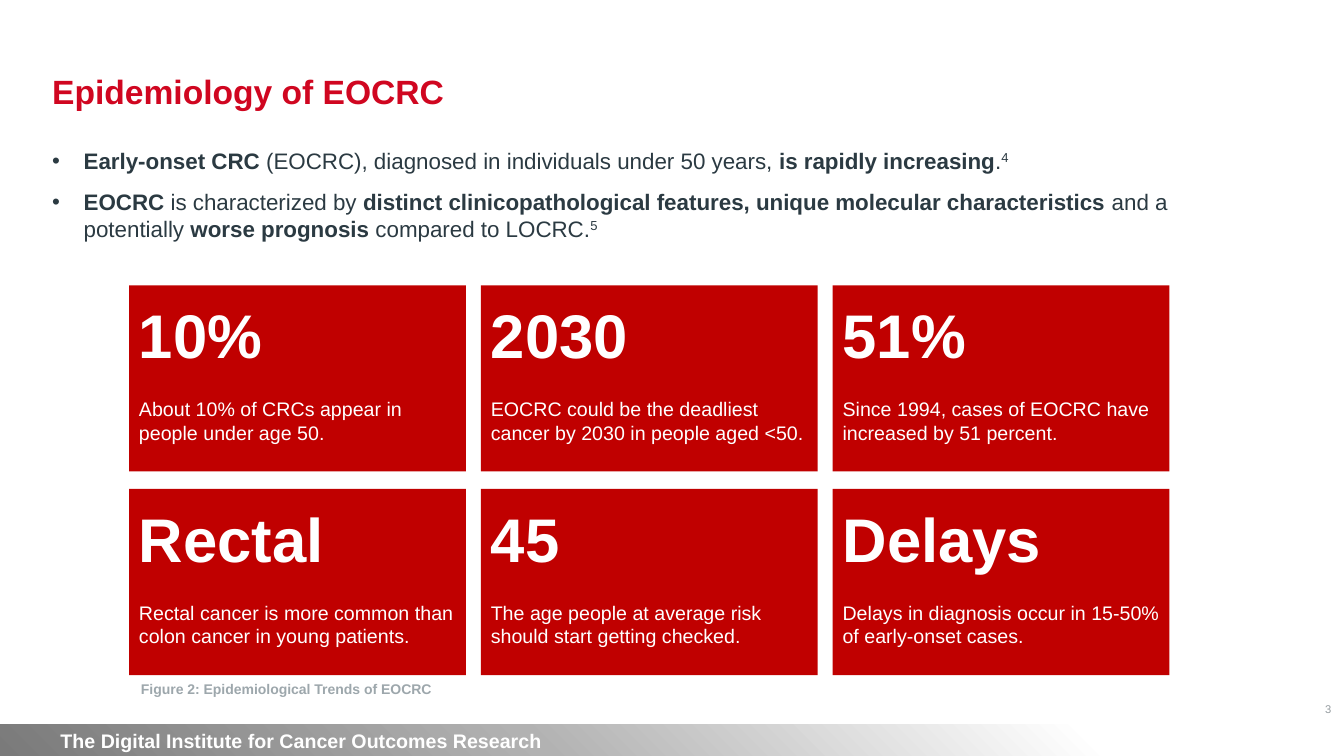
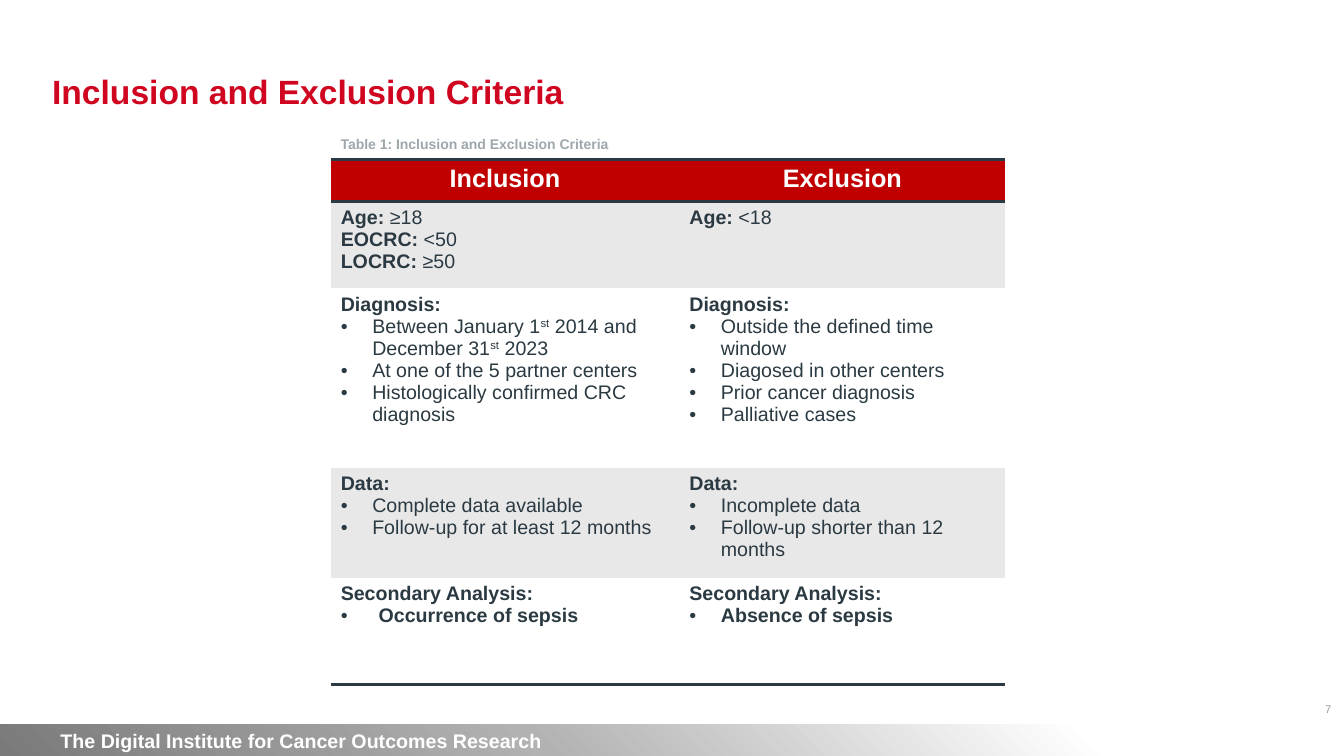
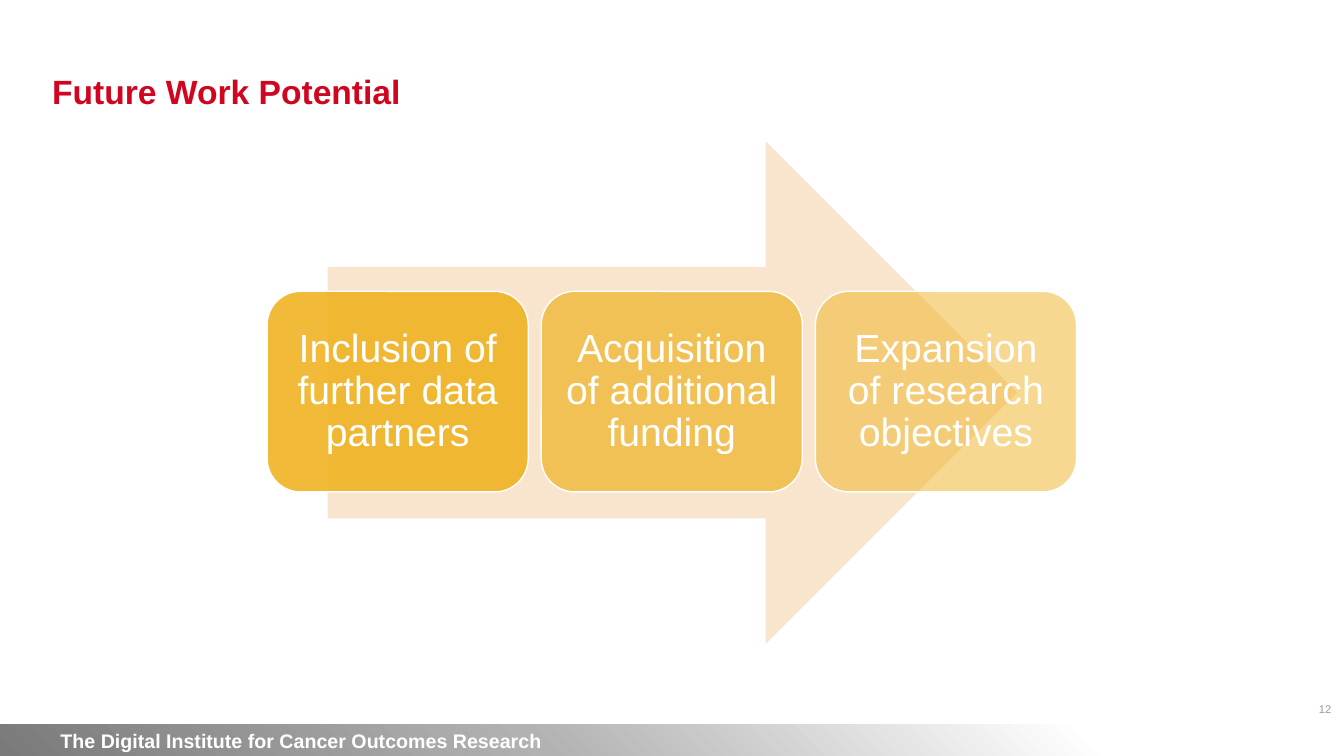
from pptx import Presentation
from pptx.dml.color import RGBColor
from pptx.enum.shapes import MSO_SHAPE
from pptx.enum.text import MSO_ANCHOR, PP_ALIGN
from pptx.oxml import parse_xml
from pptx.oxml.ns import nsdecls, qn
from pptx.util import Pt

RECTANGLE, ROUNDED, ARROW = (
    MSO_SHAPE.RECTANGLE, MSO_SHAPE.ROUNDED_RECTANGLE, MSO_SHAPE.RIGHT_ARROW)
TOP, MIDDLE, BOTTOM = MSO_ANCHOR.TOP, MSO_ANCHOR.MIDDLE, MSO_ANCHOR.BOTTOM
LEFT, CENTER, RIGHT = PP_ALIGN.LEFT, PP_ALIGN.CENTER, PP_ALIGN.RIGHT

FONT = "Arial"
WHITE = RGBColor(0xFF, 0xFF, 0xFF)
INK = RGBColor(0x2B, 0x3A, 0x42)
TITLE_RED = RGBColor(0xD0, 0x06, 0x20)
CARD_RED = RGBColor(0xC0, 0x00, 0x00)
CAPTION_GRAY = RGBColor(0x9D, 0xA7, 0xAC)
NUMBER_GRAY = RGBColor(0x95, 0x9C, 0xA0)
ROW_GRAY = RGBColor(0xE8, 0xE8, 0xE9)
ARROW_CREAM = RGBColor(0xF9, 0xE5, 0xCD)
STEP_YELLOW = RGBColor(0xF0, 0xB3, 0x23)

SLIDE_W, SLIDE_H = 960, 540
INSETS = (7.2, 3.6, 7.2, 3.6)
BULLET_INDENT = 22.5
BAND_H = 22.5
BAND_STOPS = [(0, "7A7A7A"), (40, "B2B2B2"), (81, "FFFFFF")]
INSTITUTE = "The Digital Institute for Cancer Outcomes Research"

# A run is (text, style); a paragraph is (indent, runs).
PLAIN, BOLD, SUPER = "plain", "bold", "super"


def line(text, style=PLAIN):
    return (0, [(text, style)])


def bullet(*runs, indent=BULLET_INDENT):
    return (indent, runs)


def criteria(heading, *items):
    return [line(heading, BOLD)] + [bullet((item, PLAIN)) for item in items]


TRENDS = [
    bullet(("Early-onset CRC", BOLD),
           (" (EOCRC), diagnosed in individuals under 50 years, ", PLAIN),
           ("is rapidly increasing", BOLD), (".", PLAIN), ("4", SUPER)),
    bullet(("EOCRC ", BOLD), ("is characterized by ", PLAIN),
           ("distinct clinicopathological features, unique molecular characteristics", BOLD),
           (" and a potentially ", PLAIN), ("worse prognosis", BOLD),
           (" compared to LOCRC.", PLAIN), ("5", SUPER)),
]
FACTS = [
    ("10%", "About 10% of CRCs appear in people under age 50."),
    ("2030", "EOCRC could be the deadliest cancer by 2030 in people aged <50."),
    ("51%", "Since 1994, cases of EOCRC have increased by 51 percent."),
    ("Rectal", "Rectal cancer is more common than colon cancer in young patients."),
    ("45", "The age people at average risk should start getting checked."),
    ("Delays", "Delays in diagnosis occur in 15-50% of early-onset cases."),
]
CRITERIA_COLUMNS = [("Inclusion", 249), ("Exclusion", 233)]
HEADER_H = 30.2
CRITERIA_ROWS = [
    (62, [
        [(0, [("Age: ", BOLD), ("≥18", PLAIN)]),
         (0, [("EOCRC:", BOLD), (" <50", PLAIN)]),
         (0, [("LOCRC: ", BOLD), ("≥50", PLAIN)])],
        [(0, [("Age:", BOLD), (" <18", PLAIN)])],
    ]),
    (128.2, [
        [line("Diagnosis:", BOLD),
         bullet(("Between January 1", PLAIN), ("st", SUPER),
                (" 2014 and December 31", PLAIN), ("st", SUPER), (" 2023", PLAIN)),
         bullet(("At one of the 5 partner centers", PLAIN)),
         bullet(("Histologically confirmed CRC diagnosis", PLAIN))],
        criteria("Diagnosis:", "Outside the defined time window",
                 "Diagosed in other centers", "Prior cancer diagnosis",
                 "Palliative cases"),
    ]),
    (78.5, [
        criteria("Data:", "Complete data available",
                 "Follow-up for at least 12 months"),
        criteria("Data:", "Incomplete data", "Follow-up shorter than 12 months"),
    ]),
    (76.3, [
        [line("Secondary Analysis:", BOLD),
         bullet(("Occurrence of sepsis", BOLD), indent=27)],
        [line("Secondary Analysis:", BOLD), bullet(("Absence of sepsis", BOLD))],
    ]),
]
STEPS = [
    ("Inclusion of further data partners", 90),
    ("Acquisition of additional funding", 70),
    ("Expansion of research objectives", 50),
]


def set_bullet(paragraph, indent):
    properties = paragraph._p.get_or_add_pPr()
    properties.set("marL", str(Pt(indent)))
    properties.set("indent", str(-Pt(indent)))
    properties.append(parse_xml(f'<a:buFont {nsdecls("a")} typeface="{FONT}"/>'))
    properties.append(parse_xml(f'<a:buChar {nsdecls("a")} char="•"/>'))


def write(frame, paragraphs, size, color, align=LEFT, spacing=None, gap=0):
    """Fill a text frame; gap is the space between paragraphs."""
    for index, (indent, runs) in enumerate(paragraphs):
        paragraph = frame.paragraphs[0] if index == 0 else frame.add_paragraph()
        if indent:
            set_bullet(paragraph, indent)
        paragraph.alignment = align
        if spacing:
            paragraph.line_spacing = spacing
        if index and gap:
            paragraph.space_before = Pt(gap)
        for text, style in runs:
            run = paragraph.add_run()
            run.text = text
            run.font.name = FONT
            run.font.size = Pt(size)
            run.font.bold = style == BOLD
            run.font.color.rgb = color
            if style == SUPER:
                run._r.get_or_add_rPr().set("baseline", "30000")


def set_frame(frame, anchor, insets):
    frame.word_wrap = True
    frame.vertical_anchor = anchor
    (frame.margin_left, frame.margin_top,
     frame.margin_right, frame.margin_bottom) = map(Pt, insets)


def add_text(slide, box, paragraphs, size, color, anchor=TOP, insets=INSETS, **layout):
    frame = slide.shapes.add_textbox(*map(Pt, box)).text_frame
    set_frame(frame, anchor, insets)
    write(frame, paragraphs, size, color, **layout)


def add_panel(slide, kind, box, fill, anchor=TOP, insets=INSETS):
    panel = slide.shapes.add_shape(kind, *map(Pt, box))
    panel.shadow.inherit = False
    panel.fill.solid()
    panel.fill.fore_color.rgb = fill
    panel.line.fill.background()
    set_frame(panel.text_frame, anchor, insets)
    return panel


def add_band(slide):
    band = add_panel(slide, RECTANGLE, (0, SLIDE_H - BAND_H, SLIDE_W, BAND_H),
                     WHITE, MIDDLE, (43.2, 3.6, 7.2, 3.6))
    stops = "".join(f'<a:gs pos="{pos * 1000}"><a:srgbClr val="{color}"/></a:gs>'
                    for pos, color in BAND_STOPS)
    gradient = parse_xml(
        f'<a:gradFill {nsdecls("a")}><a:gsLst>{stops}</a:gsLst><a:path path="circle">'
        '<a:fillToRect l="0" t="100000" r="100000" b="0"/></a:path></a:gradFill>')
    properties = band._element.spPr
    properties.replace(properties.find(qn("a:solidFill")), gradient)
    write(band.text_frame, [line(INSTITUTE, BOLD)], 14, WHITE)


def add_slide(deck, title, number):
    slide = deck.slides.add_slide(deck.slide_layouts[6])
    add_text(slide, (923, 499.7, 28, 13.7), [line(number)], 8, NUMBER_GRAY,
             MIDDLE, (0, 0, 0, 0), align=RIGHT)
    add_band(slide)
    add_text(slide, (30.2, 23, 893, 60.5), [line(title, BOLD)], 24, TITLE_RED,
             BOTTOM, spacing=0.9)
    return slide


def add_caption(slide, left, top, text):
    add_text(slide, (left, top, 462, 19.4), [line(text, BOLD)], 10, CAPTION_GRAY)


def add_fact_cards(slide):
    left, top, width, height = 92.2, 203.8, 240.6, 133
    column_step, row_step, columns = 251.3, 145.5, 3
    for index, (figure, description) in enumerate(FACTS):
        row, column = divmod(index, columns)
        box = (left + column * column_step, top + row * row_step, width, height)
        card = add_panel(slide, RECTANGLE, box, CARD_RED, insets=(7.2, 8.6, 7.2, 3.6))
        frame = card.text_frame
        write(frame, [line(figure, BOLD)], 44, WHITE)
        detail = frame.add_paragraph()
        detail.alignment = LEFT
        detail.space_before = Pt(18.4)
        run = detail.add_run()
        run.text = description
        run.font.name = FONT
        run.font.size = Pt(14)
        run.font.color.rgb = WHITE


def set_cell(cell, fill, edges=()):
    """Fill a cell and rule the given edges ("T", "B")."""
    cell.fill.solid()
    cell.fill.fore_color.rgb = fill
    properties = cell._tc.get_or_add_tcPr()
    for index, edge in enumerate(edges):
        properties.insert(index, parse_xml(
            f'<a:ln{edge} {nsdecls("a")} w="{Pt(2)}"><a:solidFill>'
            f'<a:srgbClr val="{INK}"/></a:solidFill></a:ln{edge}>'))


def add_criteria_table(slide):
    width = sum(column_w for _, column_w in CRITERIA_COLUMNS)
    height = HEADER_H + sum(row_h for row_h, _ in CRITERIA_ROWS)
    table = slide.shapes.add_table(
        len(CRITERIA_ROWS) + 1, len(CRITERIA_COLUMNS),
        Pt(236.2), Pt(113.8), Pt(width), Pt(height)).table
    no_style = "{2D5ABB26-0587-4C30-8999-92F81FD0307C}"
    table._tbl.tblPr.find(qn("a:tableStyleId")).text = no_style
    table.rows[0].height = Pt(HEADER_H)
    for column, (heading, column_w) in enumerate(CRITERIA_COLUMNS):
        table.columns[column].width = Pt(column_w)
        cell = table.cell(0, column)
        set_cell(cell, CARD_RED, "TB")
        write(cell.text_frame, [line(heading, BOLD)], 18, WHITE, align=CENTER)
    for row, (row_h, cells) in enumerate(CRITERIA_ROWS, 1):
        table.rows[row].height = Pt(row_h)
        for column, paragraphs in enumerate(cells):
            cell = table.cell(row, column)
            set_cell(cell, ROW_GRAY if row % 2 else WHITE,
                     "B" if row == len(CRITERIA_ROWS) else "")
            write(cell.text_frame, paragraphs, 14, INK)


def add_steps(slide):
    add_panel(slide, ARROW, (234, 100.8, 492.5, 359.3), ARROW_CREAM)
    left, top, width, height, step_gap = 190.8, 208.1, 186.5, 143.3, 9.3
    for index, (label, opacity) in enumerate(STEPS):
        box = (left + index * (width + step_gap), top, width, height)
        step = add_panel(slide, ROUNDED, box, STEP_YELLOW, MIDDLE, (8.6,) * 4)
        color = step._element.spPr.find(qn("a:solidFill")).find(qn("a:srgbClr"))
        color.append(parse_xml(f'<a:alpha {nsdecls("a")} val="{opacity * 1000}"/>'))
        step.line.color.rgb = WHITE
        step.line.width = Pt(1)
        write(step.text_frame, [line(label)], 28, WHITE, align=CENTER, spacing=0.9)


def main():
    deck = Presentation()
    deck.slide_width, deck.slide_height = Pt(SLIDE_W), Pt(SLIDE_H)

    epidemiology = add_slide(deck, "Epidemiology of EOCRC", "3")
    add_text(epidemiology, (30.2, 101.5, 867, 95), TRENDS, 16, INK, gap=10)
    add_caption(epidemiology, 93.6, 482.4, "Figure 2: Epidemiological Trends of EOCRC")
    add_fact_cards(epidemiology)

    selection = add_slide(deck, "Inclusion and Exclusion Criteria", "7")
    add_criteria_table(selection)
    add_caption(selection, 236.2, 93.6, "Table 1: Inclusion and Exclusion Criteria")

    future = add_slide(deck, "Future Work Potential", "12")
    add_steps(future)

    deck.save("out.pptx")


if __name__ == "__main__":
    main()
